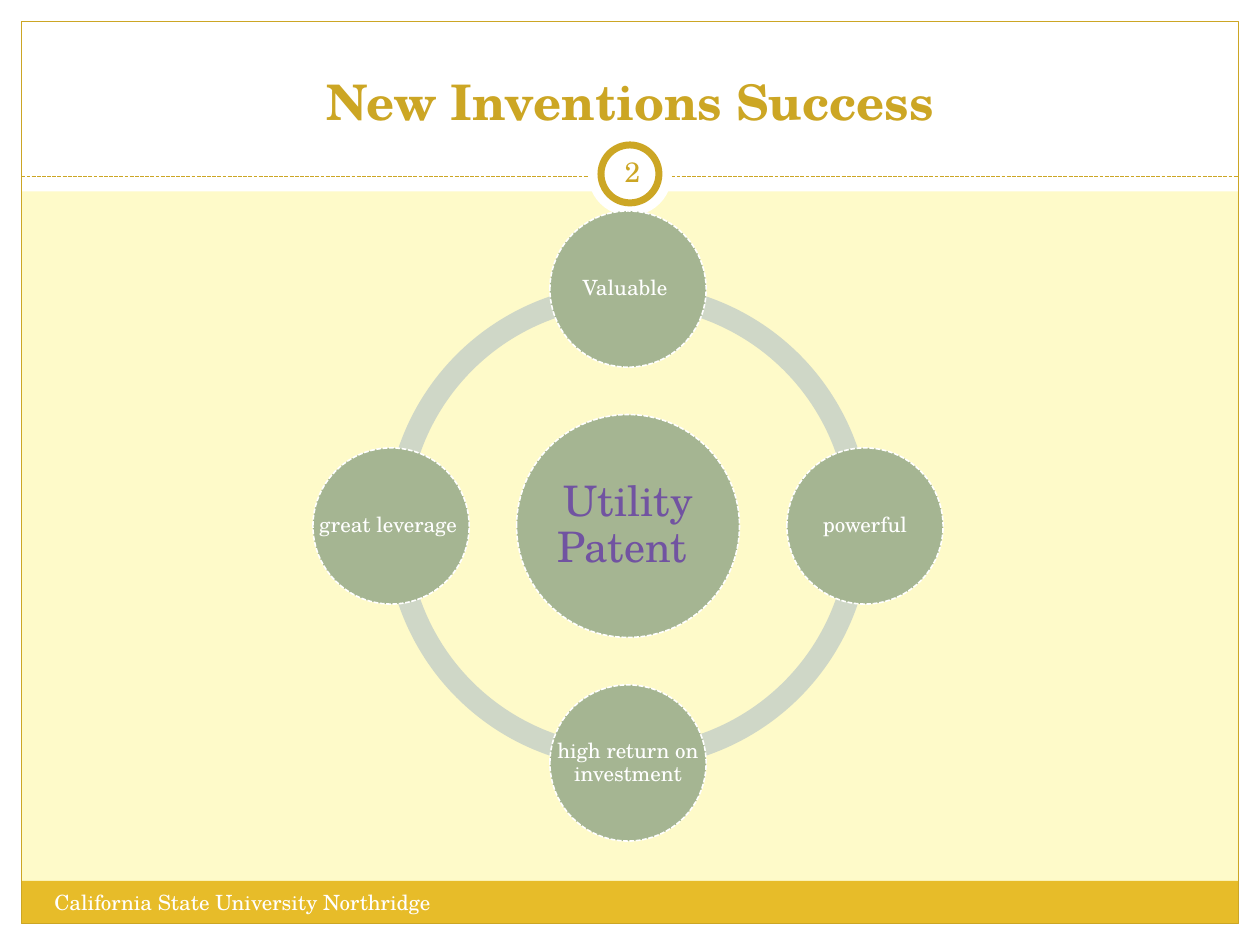
from dataclasses import dataclass
from math import cos, radians, sin
from typing import Optional

from lxml.etree import SubElement
from pptx import Presentation
from pptx.dml.color import RGBColor
from pptx.enum.dml import MSO_LINE
from pptx.enum.shapes import MSO_CONNECTOR, MSO_SHAPE
from pptx.enum.text import MSO_ANCHOR, PP_ALIGN
from pptx.oxml.ns import qn
from pptx.shapes.autoshape import Shape
from pptx.slide import Slide
from pptx.util import Pt

FONT = "TeX Gyre Schola"
WHITE = RGBColor(0xFF, 0xFF, 0xFF)
CREAM = RGBColor(0xFE, 0xFA, 0xC9)
YELLOW = RGBColor(0xE7, 0xBC, 0x29)
GOLD = RGBColor(0xCC, 0xA6, 0x24)
SAGE = RGBColor(0xA5, 0xB5, 0x92)
PALE_SAGE = RGBColor(0xCF, 0xD7, 0xC7)
PURPLE = RGBColor(0x71, 0x53, 0xA1)

WIDTH, HEIGHT = 720, 540
MARGIN = 12.24
CENTER_X, CENTER_Y = 358.9, 300.6
ORBIT = 135.4
RING_SIZE = 277.2
NODE_SIZE = 89.3
QUARTER = 54


@dataclass(frozen=True)
class Box:
    left: float
    top: float
    width: float
    height: float


@dataclass(frozen=True)
class Outline:
    color: RGBColor
    weight: float
    dash: Optional[MSO_LINE] = None


@dataclass(frozen=True)
class Label:
    text: str
    size: float
    color: RGBColor
    align: PP_ALIGN = PP_ALIGN.CENTER
    anchor: MSO_ANCHOR = MSO_ANCHOR.MIDDLE
    bold: bool = False
    inset: Optional[float] = None
    line_spacing: float = 1.0


@dataclass(frozen=True)
class Node:
    label: Label
    x: float
    y: float
    size: float


def square(x: float, y: float, size: float) -> Box:
    return Box(x - size / 2, y - size / 2, size, size)


def draw_shape(slide: Slide, kind: MSO_SHAPE, box: Box, fill: Optional[RGBColor],
               outline: Optional[Outline] = None) -> Shape:
    shape = slide.shapes.add_shape(
        kind, Pt(box.left), Pt(box.top), Pt(box.width), Pt(box.height))
    shape.shadow.inherit = False
    if fill is None:
        shape.fill.background()
    else:
        shape.fill.solid()
        shape.fill.fore_color.rgb = fill
    if outline is None:
        shape.line.fill.background()
    else:
        shape.line.color.rgb = outline.color
        shape.line.width = Pt(outline.weight)
        if outline.dash is not None:
            shape.line.dash_style = outline.dash
    return shape


def draw_label(slide: Slide, box: Box, label: Label) -> None:
    frame = slide.shapes.add_textbox(
        Pt(box.left), Pt(box.top), Pt(box.width), Pt(box.height)).text_frame
    frame.word_wrap = True
    frame.vertical_anchor = label.anchor
    if label.inset is not None:
        frame.margin_left = frame.margin_right = Pt(label.inset)
        frame.margin_top = frame.margin_bottom = Pt(label.inset)
    frame.text = label.text
    paragraph = frame.paragraphs[0]
    paragraph.alignment = label.align
    paragraph.line_spacing = label.line_spacing
    font = paragraph.runs[0].font
    font.name = FONT
    font.size = Pt(label.size)
    font.bold = label.bold
    font.color.rgb = label.color


def draw_node(slide: Slide, node: Node) -> None:
    box = square(node.x, node.y, node.size)
    draw_shape(slide, MSO_SHAPE.OVAL, box, SAGE, Outline(WHITE, 0.9, MSO_LINE.SQUARE_DOT))
    draw_label(slide, box, node.label)


def draw_divider(slide: Slide, y: float) -> None:
    divider = slide.shapes.add_connector(
        MSO_CONNECTOR.STRAIGHT, Pt(MARGIN), Pt(y), Pt(WIDTH - MARGIN), Pt(y))
    divider.line.color.rgb = GOLD
    divider.line.width = Pt(0.75)
    divider.line.dash_style = MSO_LINE.SQUARE_DOT
    SubElement(divider._element.spPr, qn("a:effectLst"))


def draw_frame(slide: Slide) -> None:
    borders = [
        Box(0, HEIGHT - MARGIN, WIDTH, MARGIN),
        Box(0, 0, WIDTH, 109.44),
        Box(0, 0, MARGIN, HEIGHT),
        Box(WIDTH - MARGIN, 0, MARGIN, HEIGHT),
    ]
    for border in borders:
        draw_shape(slide, MSO_SHAPE.RECTANGLE, border, WHITE)
    inner_width = WIDTH - 2 * MARGIN
    draw_shape(slide, MSO_SHAPE.RECTANGLE, Box(MARGIN, 503.3, inner_width, 24.46), YELLOW)
    draw_shape(slide, MSO_SHAPE.RECTANGLE,
               Box(MARGIN, MARGIN, inner_width, HEIGHT - 2 * MARGIN), None, Outline(GOLD, 0.75))
    draw_divider(slide, 100.8)
    draw_shape(slide, MSO_SHAPE.OVAL, square(360, 99.4, 48), WHITE)
    draw_shape(slide, MSO_SHAPE.OVAL, square(360, 99.4, 33.1), WHITE, Outline(GOLD, 4))


def draw_cycle(slide: Slide) -> None:
    ring = square(CENTER_X, CENTER_Y, RING_SIZE)
    for quarter in (2, 1, 0, 3):
        arc = draw_shape(slide, MSO_SHAPE.BLOCK_ARC, ring, PALE_SAGE)
        arc.adjustments[0] = quarter * QUARTER
        arc.adjustments[1] = (quarter + 1) % 4 * QUARTER
        arc.adjustments[2] = 0.046

    hub = Label("Utility Patent ", 24, PURPLE, inset=2.2, line_spacing=0.9)
    draw_node(slide, Node(hub, CENTER_X, CENTER_Y, 127.4))
    benefits = ["Valuable ", "powerful", "high return on investment", "great leverage "]
    for index, benefit in enumerate(benefits):
        angle = radians(90 * index - 90)
        label = Label(benefit, 12, WHITE, inset=1.4, line_spacing=0.9)
        draw_node(slide, Node(label, CENTER_X + ORBIT * cos(angle),
                              CENTER_Y + ORBIT * sin(angle), NODE_SIZE))


def main() -> None:
    presentation = Presentation()
    presentation.slide_width, presentation.slide_height = Pt(WIDTH), Pt(HEIGHT)
    slide = presentation.slides.add_slide(presentation.slide_layouts[6])
    slide.background.fill.solid()
    slide.background.fill.fore_color.rgb = CREAM

    draw_frame(slide)
    draw_label(slide, Box(24, 18, 672, 60),
               Label("New Inventions Success", 28, GOLD, anchor=MSO_ANCHOR.BOTTOM, bold=True))
    draw_label(slide, Box(24, 504.6, 282, 28.8),
               Label("California State University Northridge", 12, WHITE,
                     PP_ALIGN.LEFT, MSO_ANCHOR.TOP))
    draw_label(slide, Box(343.4, 80.6, 36, 34.6), Label("2", 16, GOLD, inset=3.6))
    draw_cycle(slide)
    presentation.save("out.pptx")


if __name__ == "__main__":
    main()
